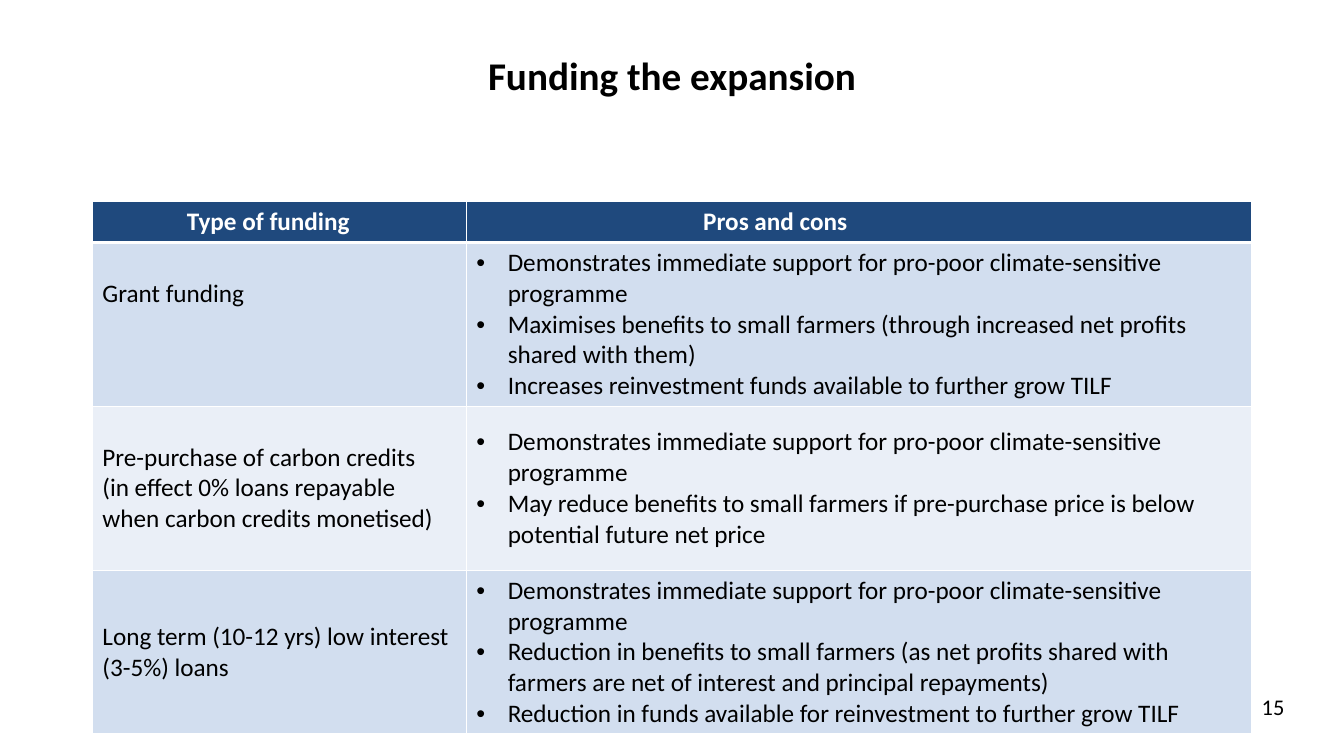
from lxml.etree import SubElement as Sub
from pptx import Presentation
from pptx.dml.color import RGBColor
from pptx.enum.text import MSO_ANCHOR as Anchor, PP_ALIGN as Align
from pptx.oxml.ns import qn
from pptx.util import Pt

WHITE, BLACK, NAVY = "FFFFFF", "000000", "1F497D"
BANDS = ["D2DEEF", "EAEFF7"]
SHARED = "Demonstrates immediate support for pro-poor climate-sensitive programme"
HEADS = [("Type of funding", 67.5), ("Pros and cons", 169.3)]
ROWS = [
    (["Grant funding"],
     [SHARED,
      "Maximises benefits to small farmers (through increased net profits shared with them)",
      "Increases reinvestment funds available to further grow TILF"]),
    (["Pre-purchase of carbon credits",
      "(in effect 0% loans repayable when carbon credits monetised)"],
     [SHARED,
      "May reduce benefits to small farmers if pre-purchase price is below potential future net price"]),
    (["Long term (10-12 yrs) low interest (3-5%) loans"],
     [SHARED,
      "Reduction in benefits to small farmers (as net profits shared with farmers are net of interest and principal repayments)",
      "Reduction in funds available for reinvestment to further grow TILF"]),
]


def color(code):
    return RGBColor.from_string(code)


def write(frame, lines, size=18, hue=BLACK, bold=False, align=Align.LEFT,
          space=1.0, bullet=False):
    for num, line in enumerate(lines):
        para = frame.add_paragraph() if num else frame.paragraphs[0]
        para.alignment, para.line_spacing = align, space
        run = para.add_run()
        run.text = line
        font = run.font
        font.name, font.size, font.bold = "Calibri", Pt(size), bold
        font.color.rgb = color(hue)
        if bullet:
            props = para._p.get_or_add_pPr()
            props.set("marL", str(Pt(22.5)))
            props.set("indent", str(-Pt(22.5)))
            Sub(props, qn("a:buFont"), typeface="Arial")
            Sub(props, qn("a:buChar"), char="•")


def style(cell, fill, top=1, base=1):
    props = cell._tc.get_or_add_tcPr()
    for side, width in zip("LRTB", (1, 1, top, base)):
        line = Sub(props, qn("a:ln" + side), w=str(Pt(width)))
        Sub(Sub(line, qn("a:solidFill")), qn("a:srgbClr"), val=WHITE)
    cell.fill.solid()
    cell.fill.fore_color.rgb = color(fill)


def add_title(slide, left, top, width, height):
    title = slide.shapes.title
    title.left, title.top = Pt(left), Pt(top)
    title.width, title.height = Pt(width), Pt(height)
    title.text_frame.vertical_anchor = Anchor.MIDDLE
    write(title.text_frame, ["Funding the expansion"], size=28, bold=True,
          align=Align.CENTER, space=0.9)


def add_grid(slide, left, top, width, height):
    head, first = 29.2, 267
    table = slide.shapes.add_table(
        len(ROWS) + 1, 2, Pt(left), Pt(top), Pt(width), Pt(height)).table
    table.columns[0].width = Pt(first)
    table.columns[1].width = Pt(width - first)
    table.rows[0].height = Pt(head)
    for col, (label, inset) in enumerate(HEADS):
        cell = table.cell(0, col)
        style(cell, NAVY, base=3)
        cell.margin_left = Pt(inset)
        write(cell.text_frame, [label], hue=WHITE, bold=True)
    for num, row in enumerate(ROWS, 1):
        table.rows[num].height = Pt((height - head) / len(ROWS))
        for col, lines in enumerate(row):
            cell = table.cell(num, col)
            style(cell, BANDS[(num - 1) % 2], top=3 if num == 1 else 1)
            cell.vertical_anchor = Anchor.MIDDLE
            write(cell.text_frame, lines, bullet=col == 1)
    grant = table.cell(1, 0)
    grant.vertical_anchor = Anchor.TOP
    grant.margin_top = Pt(25.6)


def add_page(slide, left, top, width, height):
    box = slide.shapes.add_textbox(Pt(left), Pt(top), Pt(width), Pt(height))
    box.text_frame.word_wrap = False
    write(box.text_frame, ["15"], size=16)


def main():
    deck = Presentation()
    deck.slide_width, deck.slide_height = Pt(960), Pt(540)
    slide = deck.slides.add_slide(deck.slide_layouts[5])
    add_title(slide, 66, 28.8, 828, 53.3)
    add_grid(slide, 66, 144, 828, 380.2)
    add_page(slide, 894.2, 491.8, 31, 26.6)
    deck.save("out.pptx")


if __name__ == "__main__":
    main()
